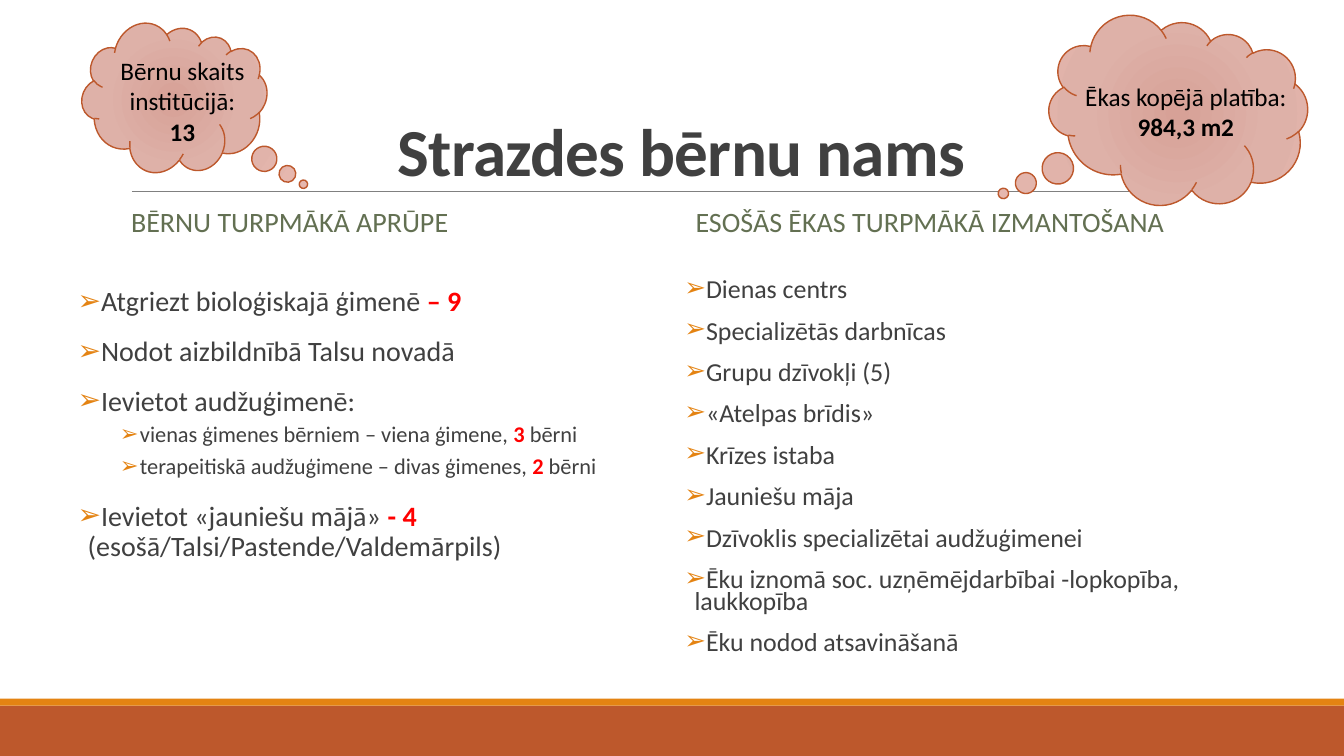
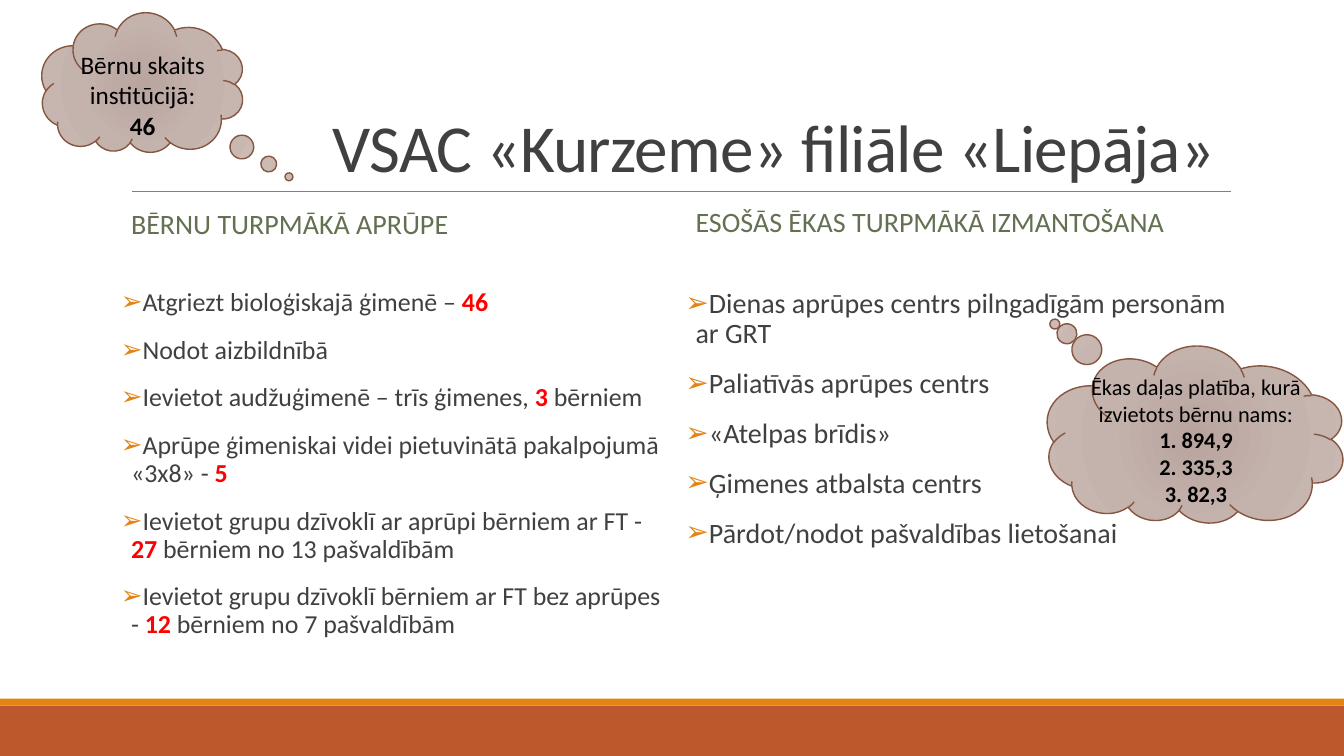
from dataclasses import dataclass
from typing import NamedTuple

from lxml.etree import SubElement
from pptx import Presentation
from pptx.dml.color import RGBColor
from pptx.enum.shapes import MSO_CONNECTOR as Connector, MSO_SHAPE as Preset
from pptx.enum.text import MSO_ANCHOR as Anchor, MSO_AUTO_SIZE as AutoSize, PP_ALIGN as Align
from pptx.oxml import parse_xml
from pptx.oxml.ns import nsdecls, qn
from pptx.util import Pt


@dataclass(frozen=True)
class Theme:
    font: str = "Calibri"
    ink: str = "404040"
    black: str = "000000"
    heading: str = "637052"
    accent: str = "FF0000"
    orange: str = "E48312"
    rust: str = "BD582C"
    rule: str = "808080"
    title_size: float = 48
    large: float = 20
    medium: float = 18.5
    callout: float = 18
    small: float = 16


THEME = Theme()


class Box(NamedTuple):
    left: float
    top: float
    width: float
    height: float

    def lengths(self) -> tuple:
        return tuple(Pt(value) for value in self)


class CloudStyle(NamedTuple):
    stops: tuple[str, str, str]
    outline: str


PINK = CloudStyle(("D7A197", "DEB1A8", "E6B7AE"), THEME.rust)
BROWN = CloudStyle(("B9A49E", "C4B2AD", "CCBAB5"), "865640")


@dataclass(frozen=True)
class Line:
    phrases: tuple[str, ...]
    level: int = 0


@dataclass(frozen=True)
class Column:
    heading: str
    heading_box: Box
    list_box: Box
    lines: tuple[Line, ...]
    size: float = THEME.large
    spacing: float = 0.9


@dataclass(frozen=True)
class Cloud:
    box: Box
    rotation: float
    tail: tuple[float, float]
    style: CloudStyle
    text_box: Box
    caption: str
    figures: tuple[str, ...]
    size: float = THEME.callout


@dataclass(frozen=True)
class Home:
    title: str
    title_box: Box
    bold: bool
    align: Align
    columns: tuple[Column, Column]
    clouds: tuple[Cloud, Cloud]


def lines(*texts: str) -> tuple[Line, ...]:
    return tuple(Line((text,)) for text in texts)


CARE = "BĒRNU TURPMĀKĀ APRŪPE"
BUILDING = "ESOŠĀS ĒKAS TURPMĀKĀ IZMANTOŠANA"
HEAD_COUNT = "Bērnu skaits institūcijā:"
RIGHT_HEADING = Box(489.6, 145.4, 388.8, 58.3)

STRAZDE = Home(
    "Strazdes bērnu nams", Box(90.7, 25.2, 792, 114.5), True, Align.CENTER,
    (
        Column(CARE, Box(86.4, 145.4, 388.8, 58.3), Box(55.4, 201.6, 406, 208.8), (
            Line(("Atgriezt bioloģiskajā ģimenē ", "– 9")),
            Line(("Nodot aizbildnībā Talsu novadā",)),
            Line(("Ievietot audžuģimenē:",)),
            Line(("vienas ģimenes bērniem – viena ģimene, ", "3", " bērni"), 1),
            Line(("terapeitiskā audžuģimene – divas ģimenes, ", "2", " bērni"), 1),
            Line(("Ievietot «jauniešu mājā» ", "- 4 ", "(esošā/Talsi/Pastende/Valdemārpils)")),
        )),
        Column(BUILDING, RIGHT_HEADING, Box(488.9, 197.3, 408.2, 290.2), lines(
            "Dienas centrs",
            "Specializētās darbnīcas",
            "Grupu dzīvokļi (5)",
            "«Atelpas brīdis»",
            "Krīzes istaba",
            "Jauniešu māja",
            "Dzīvoklis specializētai audžuģimenei",
            "Ēku iznomā soc. uzņēmējdarbībai -lopkopība, laukkopība",
            "Ēku nodod atsavināšanā",
        ), THEME.medium, 0.7),
    ),
    (
        Cloud(Box(59.8, 17.3, 128.2, 108), 22.9, (0.85, 0.18), PINK,
              Box(74.9, 36, 110.9, 72.7), HEAD_COUNT, ("13",)),
        Cloud(Box(749.5, 13.7, 182.9, 134.6), 21.2, (-0.52, 0.73), PINK,
              Box(763.9, 54.7, 166.3, 72.7), "Ēkas kopējā platība:", ("984,3 m2",)),
    ),
)

LIEPAJA = Home(
    "VSAC «Kurzeme» filiāle «Liepāja»", Box(230.4, 22.3, 655, 114.5), False, Align.LEFT,
    (
        Column(CARE, Box(86.4, 146.9, 388.8, 58.3), Box(86.4, 203, 388.8, 265.7), (
            Line(("Atgriezt bioloģiskajā ģimenē – ", "46")),
            Line(("Nodot aizbildnībā",)),
            Line(("Ievietot audžuģimenē – trīs ģimenes, ", "3", " bērniem")),
            Line(("Aprūpe ģimeniskai videi pietuvinātā pakalpojumā «3x8» - ", "5")),
            Line(("Ievietot grupu dzīvoklī ar aprūpi bērniem ar FT - ", "27 ",
                  "bērniem no 13 pašvaldībām")),
            Line(("Ievietot grupu dzīvoklī bērniem ar FT bez aprūpes - ", "12",
                  " bērniem no 7 pašvaldībām")),
        ), THEME.medium),
        Column(BUILDING, RIGHT_HEADING, Box(489.6, 203, 388.8, 265.7), lines(
            "Dienas aprūpes centrs pilngadīgām personām ar GRT",
            "Paliatīvās aprūpes centrs",
            "«Atelpas brīdis»",
            "Ģimenes atbalsta centrs",
            "Pārdot/nodot pašvaldības lietošanai",
        )),
    ),
    (
        Cloud(Box(29.5, 9.4, 144.7, 101.5), 188.1, (-0.78, -0.5), BROWN,
              Box(46.1, 31.7, 111.6, 72.7), HEAD_COUNT, ("46",)),
        Cloud(Box(747.4, 247.7, 213.1, 128.2), 188.1, (0.52, 0.51), BROWN,
              Box(748.8, 262.8, 211, 104.4), "Ēkas daļas platība, kurā izvietots bērnu nams:",
              ("1. 894,9", "2. 335,3", "3. 82,3"), THEME.small),
    ),
)


def style_run(run, size: float, color: str, bold: bool = False) -> None:
    run.font.name = THEME.font
    run.font.size = Pt(size)
    run.font.bold = bold
    run.font.color.rgb = RGBColor.from_string(color)


def place(holder, box: Box, anchor: Anchor):
    holder.left, holder.top, holder.width, holder.height = box.lengths()
    frame = holder.text_frame
    frame.word_wrap = True
    frame.auto_size = AutoSize.NONE
    frame.vertical_anchor = anchor
    frame.margin_left = frame.margin_right = Pt(7.2)
    frame.margin_top = frame.margin_bottom = Pt(3.6)
    return frame


def add_bullet(paragraph, margin: float, indent: float) -> None:
    properties = paragraph._p.get_or_add_pPr()
    properties.set("marL", str(Pt(margin)))
    properties.set("indent", str(Pt(indent)))
    color = SubElement(properties, qn("a:buClr"))
    SubElement(color, qn("a:srgbClr"), val=THEME.orange)
    SubElement(properties, qn("a:buFont"), typeface=THEME.font)
    SubElement(properties, qn("a:buChar"), char="➢")


def fill_title(holder, home: Home) -> None:
    frame = place(holder, home.title_box, Anchor.BOTTOM)
    frame.text = home.title
    paragraph = frame.paragraphs[0]
    paragraph.alignment = home.align
    paragraph.line_spacing = 0.85
    run = paragraph.runs[0]
    style_run(run, THEME.title_size, THEME.ink, home.bold)
    run._r.get_or_add_rPr().set("spc", "-50")


def fill_column(heading, listing, column: Column) -> None:
    frame = place(heading, column.heading_box, Anchor.TOP)
    frame.text = column.heading
    paragraph = frame.paragraphs[0]
    paragraph.line_spacing = 0.9
    paragraph.space_before = Pt(0)
    style_run(paragraph.runs[0], THEME.large, THEME.heading)

    frame = place(listing, column.list_box, Anchor.TOP)
    frame.margin_left = frame.margin_right = 0
    for number, line in enumerate(column.lines):
        paragraph = frame.add_paragraph() if number else frame.paragraphs[0]
        nested = line.level > 0
        paragraph.level = line.level
        paragraph.line_spacing = column.spacing
        paragraph.space_before = Pt(2 if nested else 12)
        paragraph.space_after = Pt(4 if nested else 2)
        add_bullet(paragraph, *((44.6, -14.4) if nested else (7.2, -7.2)))
        for position, phrase in enumerate(line.phrases):
            run = paragraph.add_run()
            run.text = phrase
            emphasis = position % 2 == 1
            style_run(run, THEME.small if nested else column.size,
                      THEME.accent if emphasis else THEME.ink, emphasis)


def draw_cloud(slide, cloud: Cloud) -> None:
    shape = slide.shapes.add_shape(Preset.CLOUD_CALLOUT, *cloud.box.lengths())
    shape.shadow.inherit = False
    shape.rotation = cloud.rotation
    shape.adjustments[0], shape.adjustments[1] = cloud.tail
    shape.line.color.rgb = RGBColor.from_string(cloud.style.outline)
    shape.line.width = Pt(1)
    stops = "".join(
        f'<a:gs pos="{offset}"><a:srgbClr val="{color}"/></a:gs>'
        for offset, color in zip((0, 45000, 100000), cloud.style.stops))
    gradient = parse_xml(
        f'<a:gradFill {nsdecls("a")} rotWithShape="1"><a:gsLst>{stops}</a:gsLst>'
        '<a:path path="circle"><a:fillToRect l="100000" t="100000" r="100000" b="100000"/>'
        '</a:path></a:gradFill>')
    shape.element.spPr.find(qn("a:prstGeom")).addnext(gradient)

    caption = slide.shapes.add_textbox(*cloud.text_box.lengths())
    frame = place(caption, cloud.text_box, Anchor.TOP)
    frame.text = "\n".join((cloud.caption, *cloud.figures))
    for number, paragraph in enumerate(frame.paragraphs):
        paragraph.alignment = Align.CENTER
        style_run(paragraph.runs[0], cloud.size, THEME.black, number > 0)


def draw_band(slide, box: Box, color: str):
    band = slide.shapes.add_shape(Preset.RECTANGLE, *box.lengths())
    band.shadow.inherit = False
    band.fill.solid()
    band.fill.fore_color.rgb = RGBColor.from_string(color)
    band.line.fill.background()
    return band


def dress_layout(layout, slide) -> None:
    for holder in list(layout.placeholders):
        if holder.placeholder_format.idx >= 10:
            holder.element.getparent().remove(holder.element)
    rule = slide.shapes.add_connector(
        Connector.STRAIGHT, Pt(94.3), Pt(136.8), Pt(879.1), Pt(136.8))
    rule.line.color.rgb = RGBColor.from_string(THEME.rule)
    rule.line.width = Pt(0.5)
    SubElement(rule._element.spPr, qn("a:effectLst"))
    footer = draw_band(slide, Box(0, 504, 960, 36), THEME.rust)
    strip = draw_band(slide, Box(0, 499, 960, 5), THEME.orange)
    for ornament in (footer, strip, rule):
        layout.shapes.element.append(ornament.element)


def build_slide(slide, home: Home) -> None:
    title, *holders = slide.placeholders
    fill_title(title, home)
    for heading, listing, column in zip(holders[::2], holders[1::2], home.columns):
        fill_column(heading, listing, column)
    for cloud in home.clouds:
        draw_cloud(slide, cloud)


def main() -> None:
    deck = Presentation()
    deck.slide_width, deck.slide_height = Pt(960), Pt(540)
    comparison = deck.slide_layouts[4]
    slides = [deck.slides.add_slide(comparison) for _ in range(2)]
    dress_layout(comparison, slides[0])
    for slide, home in zip(slides, (STRAZDE, LIEPAJA)):
        build_slide(slide, home)
    deck.save("out.pptx")


if __name__ == "__main__":
    main()
